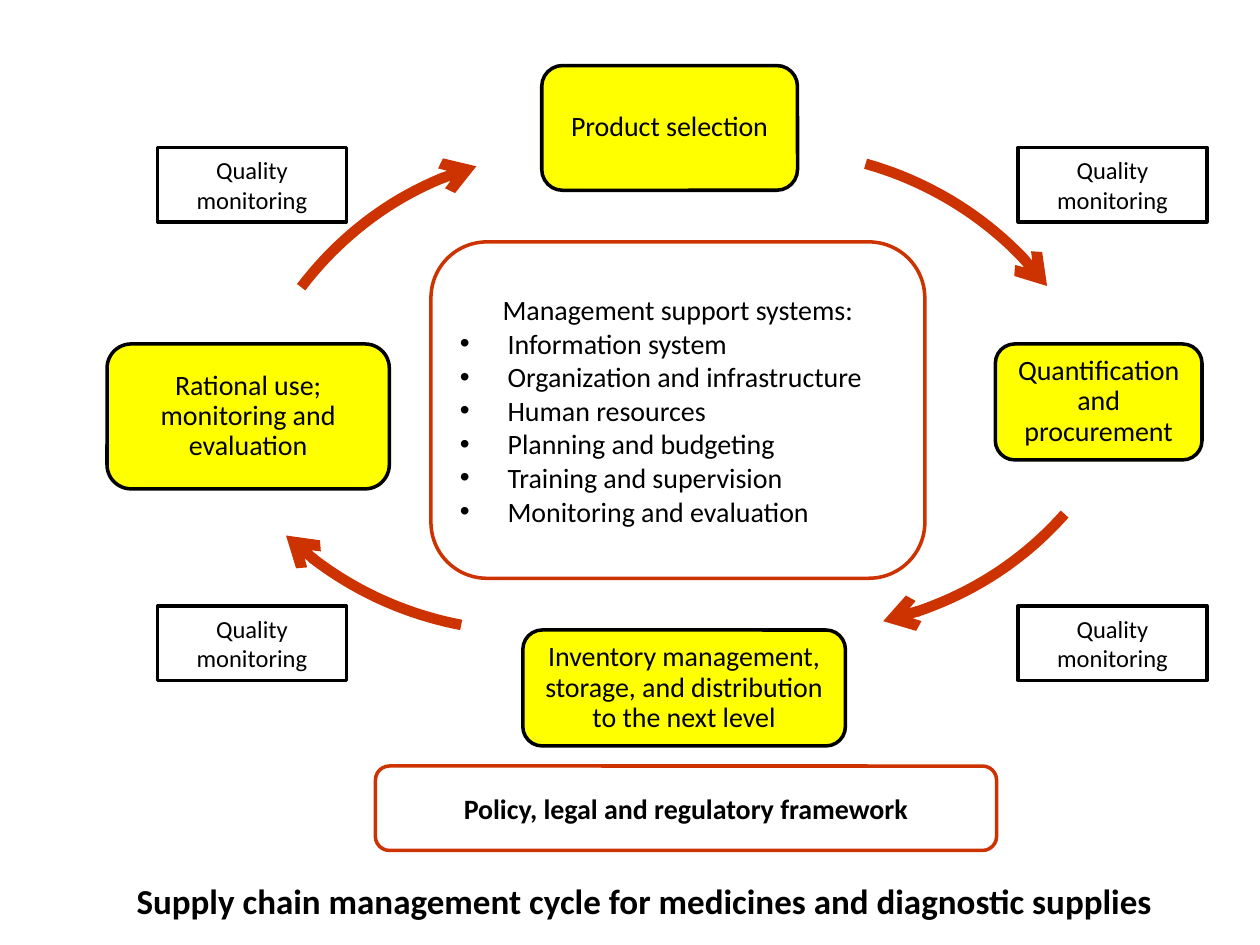
"""Build the supply chain management cycle slide."""
from lxml import etree
from pptx import Presentation
from pptx.dml.color import RGBColor
from pptx.enum.shapes import MSO_SHAPE
from pptx.enum.text import MSO_ANCHOR, MSO_AUTO_SIZE, PP_ALIGN
from pptx.oxml.ns import qn
from pptx.util import Inches, Pt

RECTANGLE, ROUNDED = MSO_SHAPE.RECTANGLE, MSO_SHAPE.ROUNDED_RECTANGLE
CENTER, LEFT = PP_ALIGN.CENTER, PP_ALIGN.LEFT
MIDDLE, TOP = MSO_ANCHOR.MIDDLE, MSO_ANCHOR.TOP
BLACK, YELLOW, RED = "000000", "FFFF00", "CC3300"

deck = Presentation()
deck.slide_width, deck.slide_height = Inches(10), Inches(7.5)
COLUMN, ROW = deck.slide_width / 100, deck.slide_height / 75
page = deck.slides.add_slide(deck.slide_layouts[5])


def color(target, value):
    """Give a fill or font a solid colour; a fill without a value is cleared."""
    if hasattr(target, "solid"):
        if value is None:
            target.background()
            return
        target.solid()
        target = target.fore_color
    else:
        target = target.color
    target.rgb = RGBColor.from_string(value)


def add_box(kind, place, lines, size, outline, fill=None, bold=False):
    """Draw an outlined box with centred lines of text."""
    left, top, width, height = place
    box = page.shapes.add_shape(kind, int(left * COLUMN), int(top * ROW),
                                int(width * COLUMN), int(height * ROW))
    box.shadow.inherit = False
    color(box.fill, fill)
    color(box.line.fill, outline)
    box.line.width = Pt(2)
    frame = box.text_frame
    frame.word_wrap = True
    frame.vertical_anchor = MIDDLE
    frame.text = "\n".join(lines)
    for para in frame.paragraphs:
        para.alignment = CENTER
        para.font.name, para.font.size, para.font.bold = "Calibri", Pt(size), bold
        color(para.font, BLACK)
    return box


title = page.shapes.title
title.left, title.top = int(9.5 * COLUMN), int(69.3 * ROW)
title.width, title.height = int(83.3 * COLUMN), int(4.4 * ROW)
title.text_frame.text = "Supply chain management cycle for medicines and diagnostic supplies"
title.text_frame.word_wrap = False
title.text_frame.auto_size = MSO_AUTO_SIZE.NONE
title.text_frame.vertical_anchor = TOP
heading = title.text_frame.paragraphs[0]
heading.alignment = CENTER
heading.font.name, heading.font.size, heading.font.bold = "Calibri", Pt(20), True
color(heading.font, BLACK)

stages = [
    ("Product selection", (43, 5.2, 20.3, 9.9)),
    ("Quantification and procurement", (79, 27.3, 16.4, 9.2)),
    ("Inventory management, storage, and distribution to the next level",
     (41.5, 50, 25.6, 9.2)),
    ("Rational use; monitoring and evaluation", (8.5, 27.3, 22.4, 11.5)),
]
for label, place in stages:
    stage = add_box(ROUNDED, place, [label], 16, BLACK, YELLOW)
    frame = stage.text_frame
    frame.margin_left = frame.margin_right = Inches(0.07)
    frame.margin_top = frame.margin_bottom = Inches(0.07)
    frame.paragraphs[0].line_spacing = 0.9

STEPS = 24
arcs = [
    ((68.7, 13), (74.4, 14.6), (79.5, 18), (83.1, 22.7)),
    ((84.5, 40.8), (80.7, 45.1), (75.7, 48), (70.1, 49.3)),
    ((36.6, 49.6), (31.4, 48.6), (26.6, 46.2), (22.7, 42.5)),
    ((23.9, 22.8), (27.4, 18.2), (32.2, 14.8), (37.8, 13.2)),
]
for arc in arcs:
    points = []
    for step in range(STEPS + 1):
        t = step / STEPS
        weights = ((1 - t) ** 3, 3 * t * (1 - t) ** 2, 3 * t ** 2 * (1 - t), t ** 3)
        points.append((sum(w * x for w, (x, y) in zip(weights, arc)) * COLUMN,
                       sum(w * y for w, (x, y) in zip(weights, arc)) * ROW))
    builder = page.shapes.build_freeform(*points[0])
    builder.add_line_segments(points[1:], close=False)
    arrow = builder.convert_to_shape()
    arrow.shadow.inherit = False
    color(arrow.fill, None)
    color(arrow.line.fill, RED)
    arrow.line.width = Pt(6)
    outline = arrow.element.spPr.find(qn("a:ln"))
    etree.SubElement(outline, qn("a:tailEnd"), type="arrow")

support = add_box(ROUNDED, (34.2, 19.2, 39.2, 26.7), [
    "Management support systems:",
    "Information system",
    "Organization and infrastructure",
    "Human resources",
    "Planning and budgeting",
    "Training and supervision",
    "Monitoring and evaluation",
], 16, RED)
INDENT = Inches(0.38)
for para in support.text_frame.paragraphs[1:]:
    para.alignment = LEFT
    properties = para._p.get_or_add_pPr()
    properties.set("marL", str(INDENT))
    properties.set("indent", str(-INDENT))
    bullet = etree.Element(qn("a:buChar"), char="•")
    properties.insert(0, bullet)
    bullet.addprevious(etree.Element(qn("a:buFont"), typeface="Arial"))

add_box(ROUNDED, (29.8, 60.8, 49.3, 6.7),
        ["Policy, legal and regulatory framework"], 16, RED, bold=True)

for left in (12.5, 80.8):
    for top in (11.7, 48.1):
        add_box(RECTANGLE, (left, top, 15, 5.9), ["Quality monitoring"], 14, BLACK)

deck.save("out.pptx")
